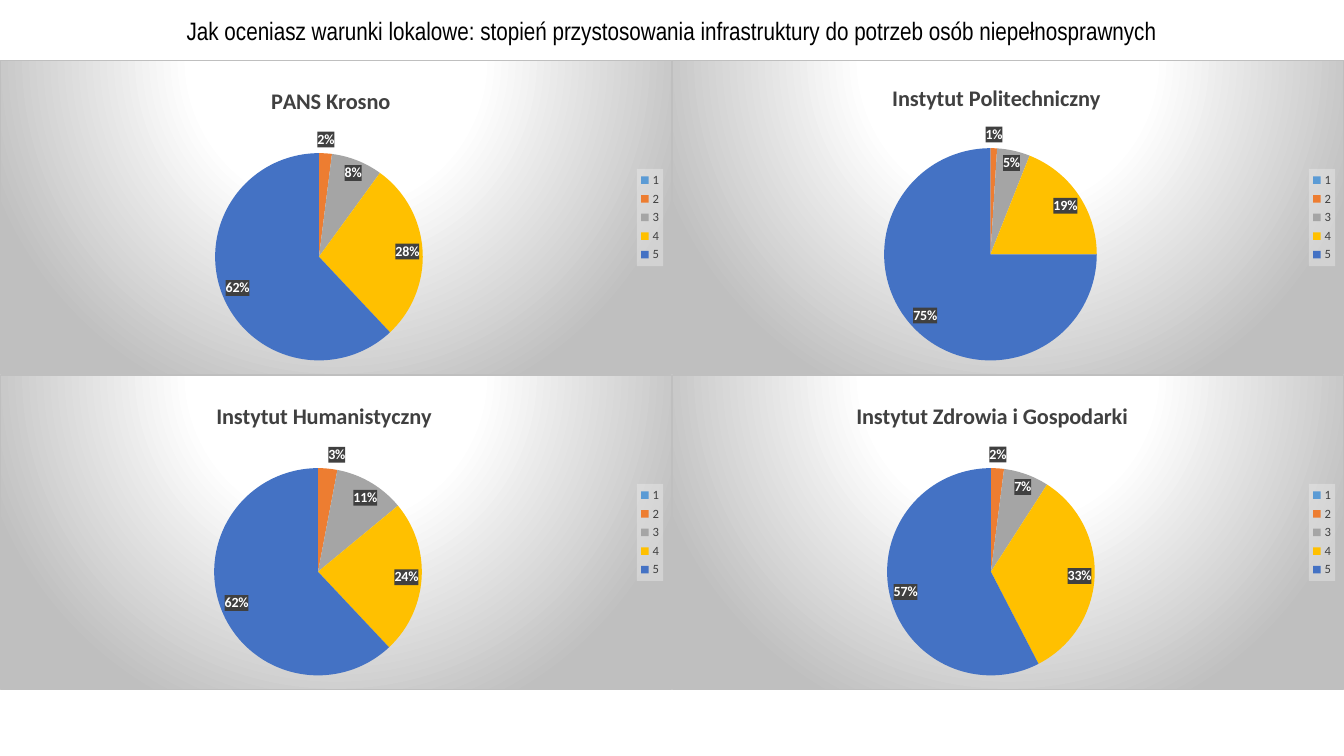
from pptx import Presentation
from pptx.chart.data import CategoryChartData
from pptx.dml.color import RGBColor
from pptx.enum.chart import XL_CHART_TYPE as ChartType, XL_LABEL_POSITION as LabelPos, XL_LEGEND_POSITION as LegendPos
from pptx.enum.text import MSO_ANCHOR as Anchor, PP_ALIGN as Align
from pptx.oxml import parse_xml
from pptx.oxml.ns import nsdecls, qn
from pptx.util import Pt

PX = 914400 / 100.8
SLIDE_W, SLIDE_H = 1344, 756
HEADER_H = 60
PANEL_W, PANEL_H = 672, 315

THEME = {
    "heading_font": "Arial Narrow", "body_font": "Calibri",
    "heading_size": 18, "panel_size": 16, "label_size": 10, "legend_size": 9,
    "black": "000000", "dark": "404040", "white": "FFFFFF",
    "edge": "BFBFBF", "legend_fill": "F2F2F2",
    "slices": ["5B9BD5", "ED7D31", "A5A5A5", "FFC000", "4472C4"],
}
RATINGS = ["1", "2", "3", "4", "5"]
PANELS = [
    ("PANS Krosno", [0, 2, 8, 28, 62], True, (267, 21), (215, 93, 208)),
    ("Instytut Politechniczny", [0, 1, 5, 19, 75], False, (216, 18), (212, 88, 213)),
    ("Instytut Humanistyczny", [0, 3, 11, 24, 62], False, (212, 21), (214, 93, 208)),
    ("Instytut Zdrowia i Gospodarki", [0, 2, 7, 33, 57], True, (180, 21), (215, 93, 208)),
]


def write_text(frame, text, *, size, font, color, bold=False, align=Align.CENTER):
    paragraph = frame.paragraphs[0]
    paragraph.alignment = align
    run = paragraph.add_run()
    run.text = text
    run.font.size = Pt(size)
    run.font.name = font
    run.font.bold = bold
    run.font.color.rgb = RGBColor.from_string(color)


def set_layout(parent, index, left, top, size=None):
    for old in parent.findall(qn("c:layout")):
        parent.remove(old)
    target = '<c:layoutTarget val="inner"/>' if size else ""
    extent = f'<c:w val="{size / PANEL_W:.4f}"/><c:h val="{size / PANEL_H:.4f}"/>' if size else ""
    parent.insert(index, parse_xml(
        f'<c:layout {nsdecls("c")}><c:manualLayout>{target}'
        '<c:xMode val="edge"/><c:yMode val="edge"/>'
        f'<c:x val="{left / PANEL_W:.4f}"/><c:y val="{top / PANEL_H:.4f}"/>{extent}'
        '</c:manualLayout></c:layout>'))


deck = Presentation()
deck.slide_width, deck.slide_height = round(SLIDE_W * PX), round(SLIDE_H * PX)
slide = deck.slides.add_slide(deck.slide_layouts[5])

heading = slide.shapes.title
heading.left, heading.top = 0, 0
heading.width, heading.height = round(SLIDE_W * PX), round(HEADER_H * PX)
heading.text_frame.word_wrap = True
heading.text_frame.vertical_anchor = Anchor.MIDDLE
write_text(
    heading.text_frame,
    "Jak oceniasz warunki lokalowe: stopień przystosowania infrastruktury do potrzeb osób niepełnosprawnych",
    size=THEME["heading_size"], font=THEME["heading_font"], color=THEME["black"])

for position, (institute, shares, zero_label, title_at, pie_at) in enumerate(PANELS):
    row, column = divmod(position, 2)
    answers = CategoryChartData()
    answers.categories = RATINGS
    answers.add_series("Series 1", shares)
    chart = slide.shapes.add_chart(
        ChartType.PIE,
        round(column * PANEL_W * PX), round((HEADER_H + row * PANEL_H) * PX),
        round(PANEL_W * PX), round(PANEL_H * PX), answers).chart
    chart.font.size = Pt(THEME["label_size"])
    chart.font.name = THEME["body_font"]
    chart.font.color.rgb = RGBColor.from_string(THEME["black"])

    chart.has_title = True
    write_text(chart.chart_title.text_frame, institute, size=THEME["panel_size"],
               font=THEME["body_font"], color=THEME["dark"], bold=True)
    chart_space = chart._chartSpace
    set_layout(chart_space.find(".//" + qn("c:title")), 1, *title_at)
    set_layout(chart_space.find(".//" + qn("c:plotArea")), 0, *pie_at)

    chart_space.find(qn("c:chart")).addnext(parse_xml(
        f'<c:spPr {nsdecls("c", "a")}><a:gradFill><a:gsLst>'
        f'<a:gs pos="0"><a:srgbClr val="{THEME["white"]}"/></a:gs>'
        f'<a:gs pos="39000"><a:srgbClr val="{THEME["white"]}"/></a:gs>'
        f'<a:gs pos="100000"><a:srgbClr val="{THEME["edge"]}"/></a:gs></a:gsLst>'
        '<a:path path="circle"><a:fillToRect l="50000" t="-80000" r="50000" b="180000"/></a:path>'
        f'</a:gradFill><a:ln w="9525"><a:solidFill><a:srgbClr val="{THEME["edge"]}"/>'
        '</a:solidFill></a:ln></c:spPr>'))

    chart.has_legend = True
    legend = chart.legend
    legend.position = LegendPos.RIGHT
    legend.include_in_layout = False
    legend.font.size = Pt(THEME["legend_size"])
    legend.font.name = THEME["body_font"]
    legend.font.color.rgb = RGBColor.from_string(THEME["dark"])
    legend._element.find(qn("c:overlay")).addnext(parse_xml(
        f'<c:spPr {nsdecls("c", "a")}><a:solidFill><a:srgbClr val="{THEME["legend_fill"]}">'
        '<a:alpha val="39000"/></a:srgbClr></a:solidFill></c:spPr>'))

    plot = chart.plots[0]
    plot.vary_by_categories = True
    ratings = plot.series[0]
    for index, color in enumerate(THEME["slices"]):
        slice_format = ratings.points[index].format
        slice_format.fill.solid()
        slice_format.fill.fore_color.rgb = RGBColor.from_string(color)
        slice_format.line.fill.background()

    labels = ratings.data_labels
    labels.show_value = True
    labels.number_format = '0"%"'
    labels.number_format_is_linked = False
    labels.position = LabelPos.BEST_FIT
    labels.font.size = Pt(THEME["label_size"])
    labels.font.name = THEME["body_font"]
    labels.font.bold = True
    labels.font.color.rgb = RGBColor.from_string(THEME["white"])
    labels._element.find(qn("c:numFmt")).addnext(parse_xml(
        f'<c:spPr {nsdecls("c", "a")}><a:solidFill><a:srgbClr val="{THEME["dark"]}"/>'
        '</a:solidFill></c:spPr>'))
    if not zero_label:
        labels._element.insert(0, parse_xml(
            f'<c:dLbl {nsdecls("c")}><c:idx val="0"/><c:delete val="1"/></c:dLbl>'))

deck.save("out.pptx")
